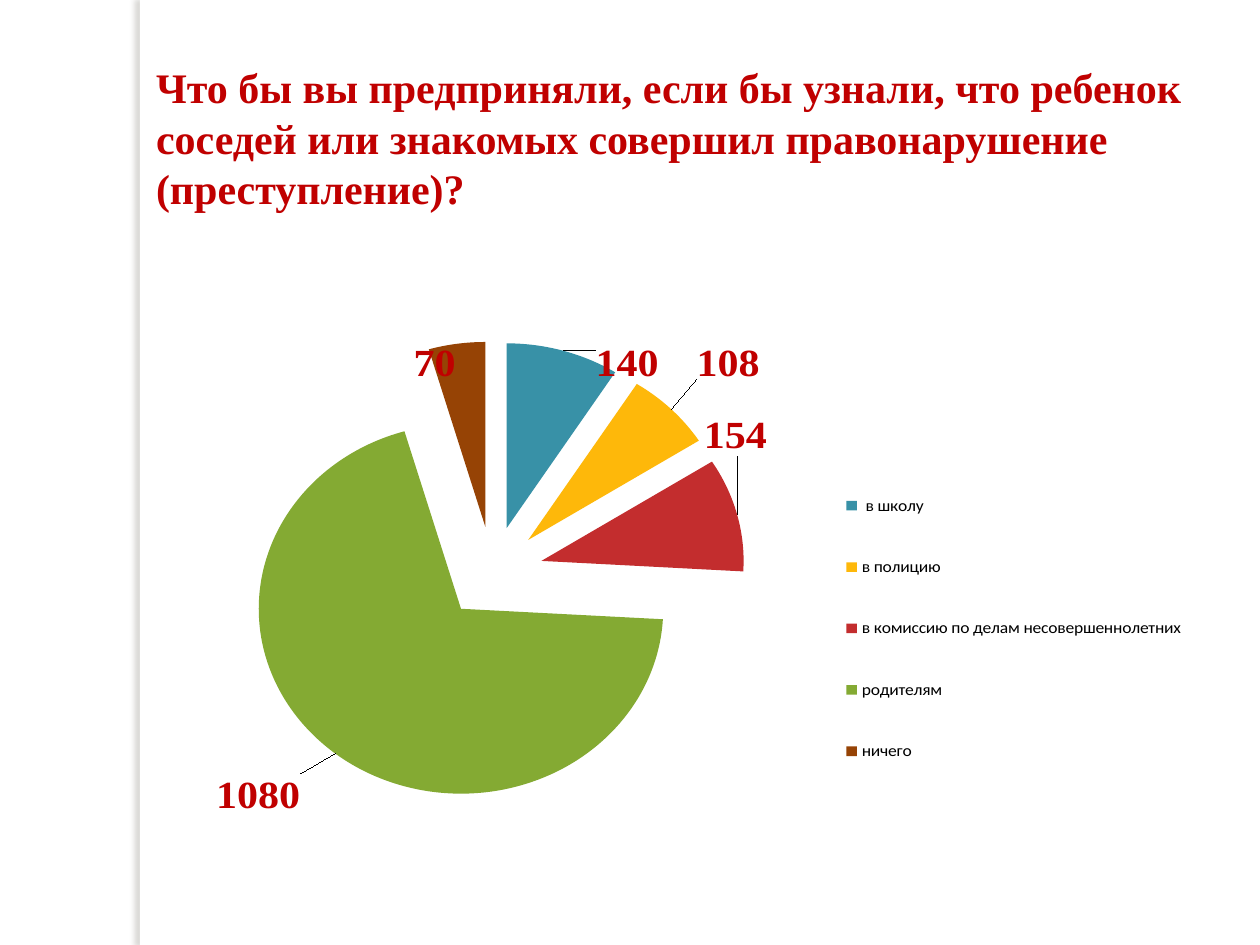
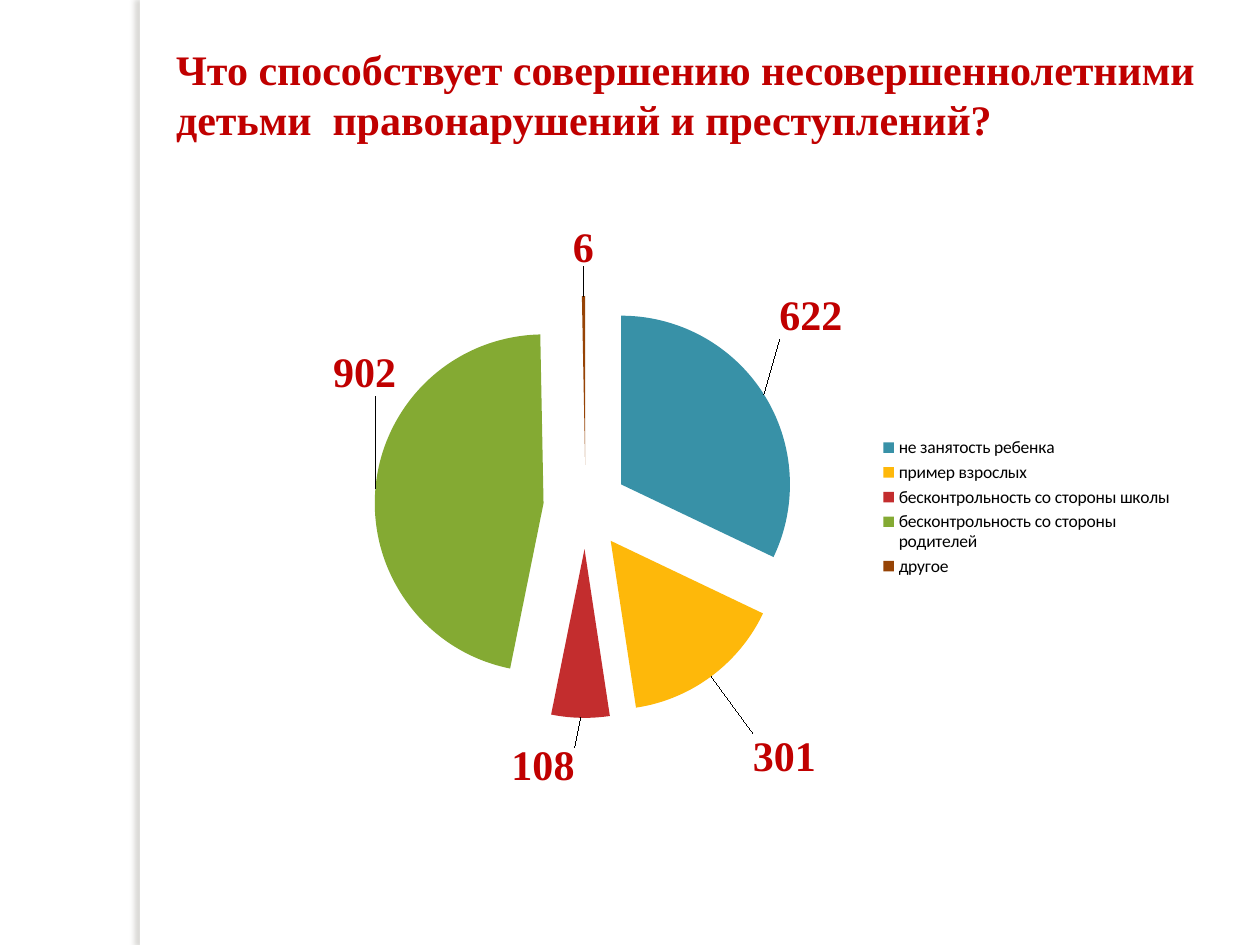
import pptx
import pptx.chart.data
import pptx.dml.color
import pptx.enum.chart
import pptx.enum.shapes
import pptx.oxml
import pptx.oxml.ns
import pptx.util

WIDTH, HEIGHT = pptx.util.Inches(10), pptx.util.Inches(7.5)
COLORS = {"paper": "FFFFFF", "shade": "736F63", "accent": "C00000", "ink": "000000"}
SLICE_COLORS = ["3891A7", "FEB80A", "C32D2E", "84AA33", "964305"]
HEADING_FONT, LEGEND_FONT = "Times New Roman", "Calibri"
EXPLOSION = 25

# Boxes are left, top, width, height as shares of the slide.
# Layouts are x, y, width, height as shares of the chart.
# Each answer is its name, its count and the shift of its label.
SURVEYS = [
    {
        "question": "Что бы вы предприняли, если бы узнали, что ребенок соседей "
                    "или знакомых совершил правонарушение (преступление)?",
        "question_box": (0.114, 0.059, 0.85, 0.175),
        "chart_box": (0.154, 0.311, 0.803, 0.588),
        "plot_layout": (0, 0, 0.59, 0.91),
        "legend_layout": (0.63, 0.22, 0.36, 0.69),
        "answers": [
            (" в школу", 140, (0.03, 0.06)),
            ("в полицию", 108, (0.02, -0.05)),
            ("в комиссию по делам несовершеннолетних", 154, (-0.04, -0.11)),
            ("родителям", 1080, (-0.03, 0.03)),
            ("ничего", 70, (0, 0.07)),
        ],
    },
    {
        "question": "Что способствует совершению несовершеннолетними "
                    "детьми  правонарушений и преступлений?",
        "question_box": (0.13, 0.039, 0.843, 0.121),
        "chart_box": (0.201, 0.237, 0.74, 0.599),
        "plot_layout": None,
        "legend_layout": None,
        "answers": [
            ("не занятость ребенка ", 622, (0.01, -0.09)),
            ("пример взрослых", 301, (0.04, 0.09)),
            ("бесконтрольность со стороны школы", 108, (-0.04, 0.04)),
            ("бесконтрольность со стороны родителей", 902, (0.03, -0.16)),
            ("другое", 6, (0, -0.04)),
        ],
    },
]


def rgb(name):
    return pptx.dml.color.RGBColor.from_string(COLORS.get(name, name))


def place(box):
    """Turn shares of the slide into lengths."""
    return [round(share * side) for share, side in zip(box, (WIDTH, HEIGHT) * 2)]


def style(font, face, size, color, bold=False):
    font.name, font.size, font.bold = face, pptx.util.Pt(size), bold
    font.color.rgb = rgb(color)


def xml(text):
    namespaces = pptx.oxml.ns.nsdecls("a", "c")
    return pptx.oxml.parse_xml(text.replace(" ", f" {namespaces} ", 1))


def chart_layout(modes, **shares):
    """Build a manual layout element from its modes and shares."""
    parts = [f'<c:{tag} val="{value}"/>' for tag, value in (modes | shares).items()]
    return xml(f'<c:layout ><c:manualLayout>{"".join(parts)}</c:manualLayout></c:layout>')


def set_region(region, modes, layout):
    """Fix the place of the plot or the legend inside its chart."""
    for automatic in region.findall(pptx.oxml.ns.qn("c:layout")):
        region.remove(automatic)
    fixed = chart_layout(modes | {"xMode": "edge", "yMode": "edge"},
                         **dict(zip("xywh", layout)))
    last_before = region.find(pptx.oxml.ns.qn("c:legendPos"))
    if last_before is None:
        region.insert(0, fixed)
    else:
        last_before.addnext(fixed)


def add_side_band(slide, box):
    band = slide.shapes.add_shape(pptx.enum.shapes.MSO_SHAPE.RECTANGLE, *place(box))
    band.fill.solid()
    band.fill.fore_color.rgb = rgb("paper")
    band.line.fill.background()
    reach = pptx.util.Pt(3)
    band._element.spPr.append(xml(
        f'<a:effectLst ><a:outerShdw blurRad="{reach}" dist="{reach}" dir="10800000" '
        f'algn="tl" rotWithShape="0"><a:srgbClr val="{COLORS["shade"]}">'
        '<a:alpha val="25000"/></a:srgbClr></a:outerShdw></a:effectLst>'))


def add_question(slide, box, wording):
    frame = slide.shapes.add_textbox(*place(box)).text_frame
    frame.word_wrap = True
    question = frame.paragraphs[0]
    question.text = wording
    style(question.font, HEADING_FONT, 24, "accent", bold=True)


def add_answer_pie(slide, box, survey):
    names, counts, shifts = zip(*survey["answers"])
    data = pptx.chart.data.CategoryChartData()
    data.categories = names
    data.add_series("Series 1", counts)
    pie = slide.shapes.add_chart(
        pptx.enum.chart.XL_CHART_TYPE.PIE, *place(box), data).chart
    pie.has_title = False
    style(pie.font, LEGEND_FONT, 10, "ink")
    pie.has_legend = True
    pie.legend.position = pptx.enum.chart.XL_LEGEND_POSITION.RIGHT
    pie.legend.include_in_layout = False

    series = pie.plots[0].series[0]
    series._element.find(pptx.oxml.ns.qn("c:tx")).addnext(
        xml(f'<c:explosion val="{EXPLOSION}"/>'))
    series.data_labels.show_value = True
    style(series.data_labels.font, HEADING_FONT, 24, "accent", bold=True)
    for index, (color, (right, down)) in enumerate(zip(SLICE_COLORS, shifts)):
        answer = series.points[index]
        answer.format.fill.solid()
        answer.format.fill.fore_color.rgb = rgb(color)
        style(answer.data_label.font, HEADING_FONT, 24, "accent", bold=True)
        answer.data_label.position = pptx.enum.chart.XL_LABEL_POSITION.OUTSIDE_END
        label = series.data_labels._element.dLbl_lst[index]
        label.find(pptx.oxml.ns.qn("c:idx")).addnext(
            chart_layout({}, x=right, y=down))

    if survey["plot_layout"]:
        plot_area = pie._chartSpace.chart.plotArea
        set_region(plot_area, {"layoutTarget": "inner"}, survey["plot_layout"])
    if survey["legend_layout"]:
        set_region(pie.legend._element, {}, survey["legend_layout"])


def add_survey_slide(deck, survey):
    slide = deck.slides.add_slide(deck.slide_layouts[6])
    slide.background.fill.solid()
    slide.background.fill.fore_color.rgb = rgb("paper")
    add_side_band(slide, (0.111, 0, 0.008, 1))
    add_question(slide, survey["question_box"], survey["question"])
    add_answer_pie(slide, survey["chart_box"], survey)


def main():
    deck = pptx.Presentation()
    deck.slide_width, deck.slide_height = WIDTH, HEIGHT
    for survey in SURVEYS:
        add_survey_slide(deck, survey)
    deck.save("out.pptx")


if __name__ == "__main__":
    main()
